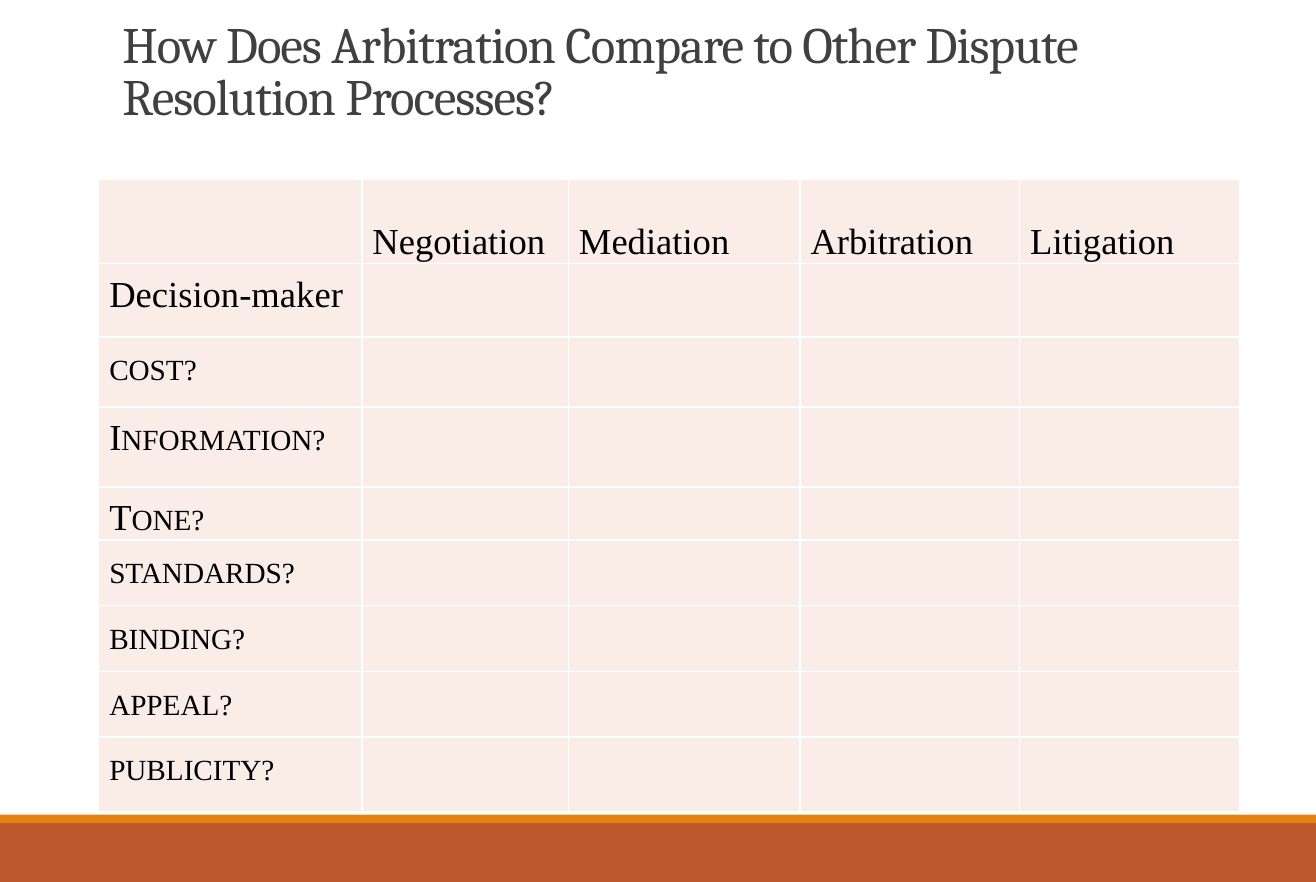
from dataclasses import dataclass
from typing import Any

from lxml.etree import SubElement
from pptx import Presentation
from pptx.dml.color import RGBColor
from pptx.enum.shapes import MSO_SHAPE
from pptx.enum.text import MSO_ANCHOR, MSO_AUTO_SIZE, PP_ALIGN
from pptx.oxml.ns import qn
from pptx.util import Pt

WIDTH, HEIGHT = 720, 482.4

PROCESSES = ["", "Negotiation", "Mediation", "Arbitration", "Litigation"]
CRITERIA = ["Decision-maker", "cost?", "Information?", "Tone?",
            "standards?", "binding?", "appeal?", "publicity?"]
COLUMN_WIDTHS = [144, 113, 126.7, 120.2, 120.2]
ROW_HEIGHTS = [46.4, 40.2, 38.2, 43.9, 28.8, 36, 36, 36, 41]


@dataclass(frozen=True)
class Theme:
    heading: str = "404040"
    ink: str = "000000"
    cell: str = "FAEDE7"
    border: str = "FFFFFF"
    footer: str = "BD582C"
    accent: str = "E48312"
    heading_font: str = "Cambria"
    table_font: str = "Times New Roman"
    heading_size: float = 27.9
    table_size: float = 20


def write(frame, text, *, font, size, color, spacing=None, tracking=None,
          small_caps=False):
    """Put one formatted, left-aligned paragraph into a text frame."""
    paragraph = frame.paragraphs[0]
    paragraph.alignment = PP_ALIGN.LEFT
    paragraph.line_spacing = spacing
    run = paragraph.add_run()
    run.text = text
    run.font.name = font
    run.font.size = Pt(size)
    run.font.color.rgb = RGBColor.from_string(color)
    properties = run.font._element
    if tracking is not None:
        properties.set("spc", str(round(tracking * 100)))
    if small_caps:
        properties.set("cap", "small")


@dataclass
class SlideBuilder:
    theme: Theme
    slide: Any

    def band(self, top, height, color):
        """Full-width colour band."""
        band = self.slide.shapes.add_shape(
            MSO_SHAPE.RECTANGLE, 0, Pt(top), Pt(WIDTH), Pt(height))
        band.shadow.inherit = False
        band.fill.solid()
        band.fill.fore_color.rgb = RGBColor.from_string(color)
        band.line.fill.background()

    def title(self, text, left, top, width, height):
        heading = self.slide.shapes.title
        heading.left, heading.top = Pt(left), Pt(top)
        heading.width, heading.height = Pt(width), Pt(height)
        frame = heading.text_frame
        frame.word_wrap = True
        frame.auto_size = MSO_AUTO_SIZE.NONE
        frame.vertical_anchor = MSO_ANCHOR.BOTTOM
        write(frame, text, font=self.theme.heading_font,
              size=self.theme.heading_size, color=self.theme.heading,
              spacing=0.85, tracking=-0.5)

    def cell(self, cell, text, top_margin, small_caps):
        cell.margin_left = cell.margin_right = Pt(5.8)
        cell.margin_top, cell.margin_bottom = Pt(top_margin), 0
        # Borders come before the fill in the cell properties
        properties = cell._tc.get_or_add_tcPr()
        for side in ("lnL", "lnR", "lnT", "lnB"):
            edge = SubElement(properties, qn(f"a:{side}"), w=str(Pt(1)))
            fill = SubElement(edge, qn("a:solidFill"))
            SubElement(fill, qn("a:srgbClr"), val=self.theme.border)
        cell.fill.solid()
        cell.fill.fore_color.rgb = RGBColor.from_string(self.theme.cell)
        if text:
            write(cell.text_frame, text, font=self.theme.table_font,
                  size=self.theme.table_size, color=self.theme.ink,
                  small_caps=small_caps)

    def comparison(self, left, top):
        """Table with processes across and criteria down."""
        table = self.slide.shapes.add_table(
            len(ROW_HEIGHTS), len(COLUMN_WIDTHS), Pt(left), Pt(top),
            Pt(sum(COLUMN_WIDTHS)), Pt(sum(ROW_HEIGHTS))).table
        table.first_row = table.horz_banding = False
        for column, width in zip(table.columns, COLUMN_WIDTHS):
            column.width = Pt(width)
        blanks = [""] * (len(PROCESSES) - 1)
        contents = [PROCESSES] + [[name] + blanks for name in CRITERIA]
        for index, (row, texts) in enumerate(zip(table.rows, contents)):
            row.height = Pt(ROW_HEIGHTS[index])
            for cell, text in zip(row.cells, texts):
                self.cell(cell, text, top_margin=6 if index else 23.4,
                          small_caps=index > 1)


def main():
    deck = Presentation()
    deck.slide_width, deck.slide_height = Pt(WIDTH), Pt(HEIGHT)
    theme = Theme()
    builder = SlideBuilder(theme, deck.slides.add_slide(deck.slide_layouts[5]))

    # Footer bands
    builder.band(450, 32.4, theme.footer)
    builder.band(445.6, 4.6, theme.accent)

    # Heading and comparison table
    builder.title("How Does Arbitration Compare to Other Dispute "
                  "Resolution Processes?", 59.8, 18.7, 635.8, 54)
    builder.comparison(54, 97.8)

    deck.save("out.pptx")


if __name__ == "__main__":
    main()
